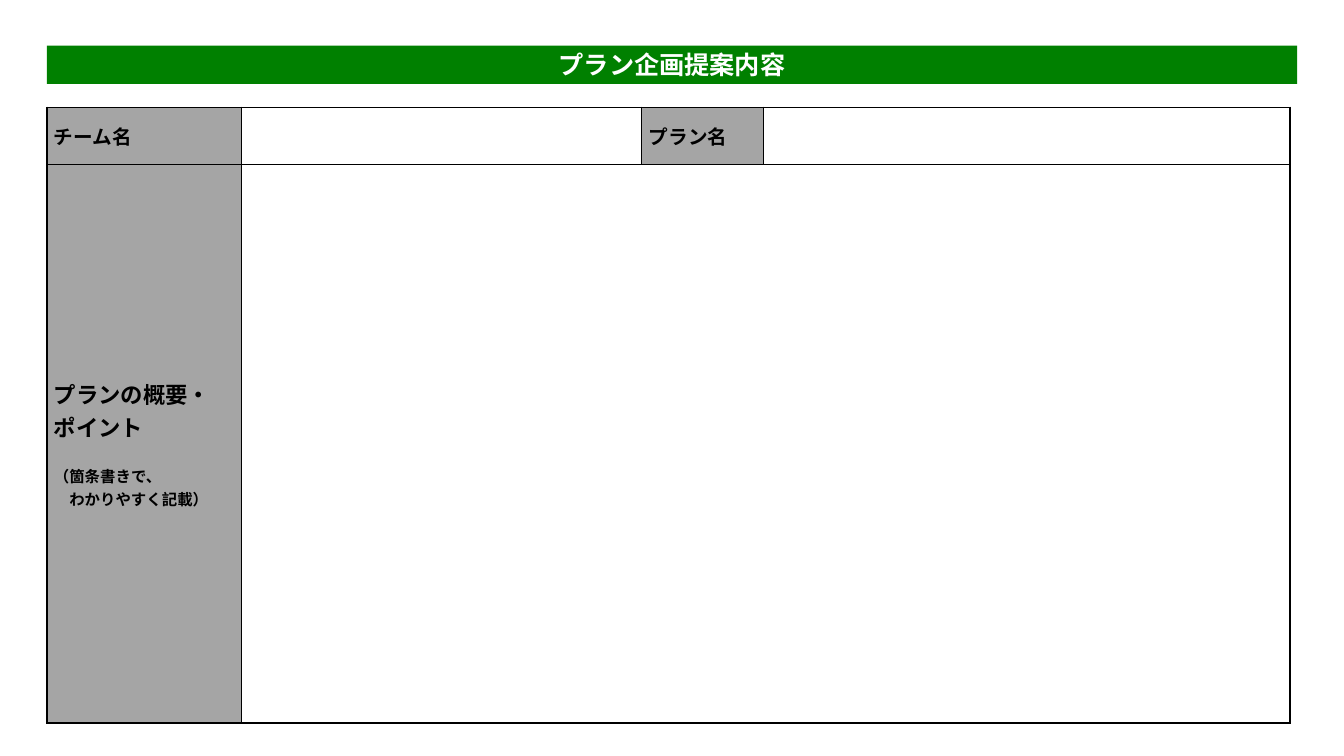
from lxml.etree import SubElement
from pptx import Presentation
from pptx.dml.color import RGBColor
from pptx.enum.text import MSO_ANCHOR, MSO_AUTO_SIZE, PP_ALIGN
from pptx.oxml.ns import qn
from pptx.util import Pt

COLORS = {"banner": "008000", "label": "A5A5A5", "blank": "FFFFFF", "ink": "000000"}
FONT = "Noto Sans CJK JP"
COLUMN_WIDTHS = [139, 286, 87, 376]
ROW_HEIGHTS = [41, 399]
LABELS = {
    (0, 0): [("チーム名", 14, 0, 0)],
    (0, 2): [("プラン名", 14, 0, 0)],
    (1, 0): [
        ("プランの概要・", 16, 0, 0),
        ("ポイント", 16, 0, 0),
        ("（箇条書きで、", 11, 16, 0),
        ("わかりやすく記載）", 11, 0, 11),
    ],
}


class FormSlide:
    """Holds the form's style and the slide it is drawn on."""

    def __init__(self, presentation):
        self.slide = presentation.slides.add_slide(presentation.slide_layouts[5])

    def style(self, paragraph, size, color, alignment):
        paragraph.alignment = alignment
        font = paragraph.font
        font.name, font.size, font.bold = FONT, Pt(size), True
        font.color.rgb = RGBColor.from_string(COLORS[color])
        properties = paragraph._p.pPr.find(qn("a:defRPr"))
        SubElement(properties, qn("a:ea"), typeface=FONT)

    def title(self, text, left, top, width, height):
        shape = self.slide.shapes.title
        shape.left, shape.top = Pt(left), Pt(top)
        shape.width, shape.height = Pt(width), Pt(height)
        shape.fill.solid()
        shape.fill.fore_color.rgb = RGBColor.from_string(COLORS["banner"])
        frame = shape.text_frame
        frame.text = text
        frame.auto_size = MSO_AUTO_SIZE.NONE
        frame.vertical_anchor = MSO_ANCHOR.MIDDLE
        frame.margin_top = frame.margin_bottom = 0
        self.style(frame.paragraphs[0], 18, "blank", PP_ALIGN.CENTER)

    def cell(self, cell, lines):
        properties = cell._tc.get_or_add_tcPr()
        for side in ("lnL", "lnR", "lnT", "lnB"):
            border = SubElement(properties, qn(f"a:{side}"), w=str(Pt(1)))
            fill = SubElement(border, qn("a:solidFill"))
            SubElement(fill, qn("a:srgbClr"), val=COLORS["ink"])
        cell.fill.solid()
        cell.fill.fore_color.rgb = RGBColor.from_string(COLORS["label" if lines else "blank"])
        cell.vertical_anchor = MSO_ANCHOR.MIDDLE
        cell.margin_left = cell.margin_right = Pt(5)
        cell.margin_top = cell.margin_bottom = 0
        if not lines:
            return
        cell.text = "\n".join(line[0] for line in lines)
        for paragraph, (_, size, gap, indent) in zip(cell.text_frame.paragraphs, lines):
            self.style(paragraph, size, "ink", PP_ALIGN.JUSTIFY)
            paragraph.space_before = Pt(gap)
            paragraph._p.pPr.set("marL", str(Pt(indent)))

    def table(self, left, top):
        table = self.slide.shapes.add_table(
            len(ROW_HEIGHTS), len(COLUMN_WIDTHS), Pt(left), Pt(top),
            Pt(sum(COLUMN_WIDTHS)), Pt(sum(ROW_HEIGHTS)),
        ).table
        table.first_row = table.horz_banding = False
        for column, width in zip(table.columns, COLUMN_WIDTHS):
            column.width = Pt(width)
        for row_index, height in enumerate(ROW_HEIGHTS):
            table.rows[row_index].height = Pt(height)
            for column_index in range(len(COLUMN_WIDTHS)):
                lines = LABELS.get((row_index, column_index))
                self.cell(table.cell(row_index, column_index), lines)
        table.cell(1, 1).merge(table.cell(1, 3))


def main():
    presentation = Presentation()
    presentation.slide_width, presentation.slide_height = Pt(960), Pt(540)
    form = FormSlide(presentation)
    form.title("プラン企画提案内容", 33.5, 32.5, 893, 27.5)
    form.table(33.5, 76.5)
    presentation.save("out.pptx")


if __name__ == "__main__":
    main()
